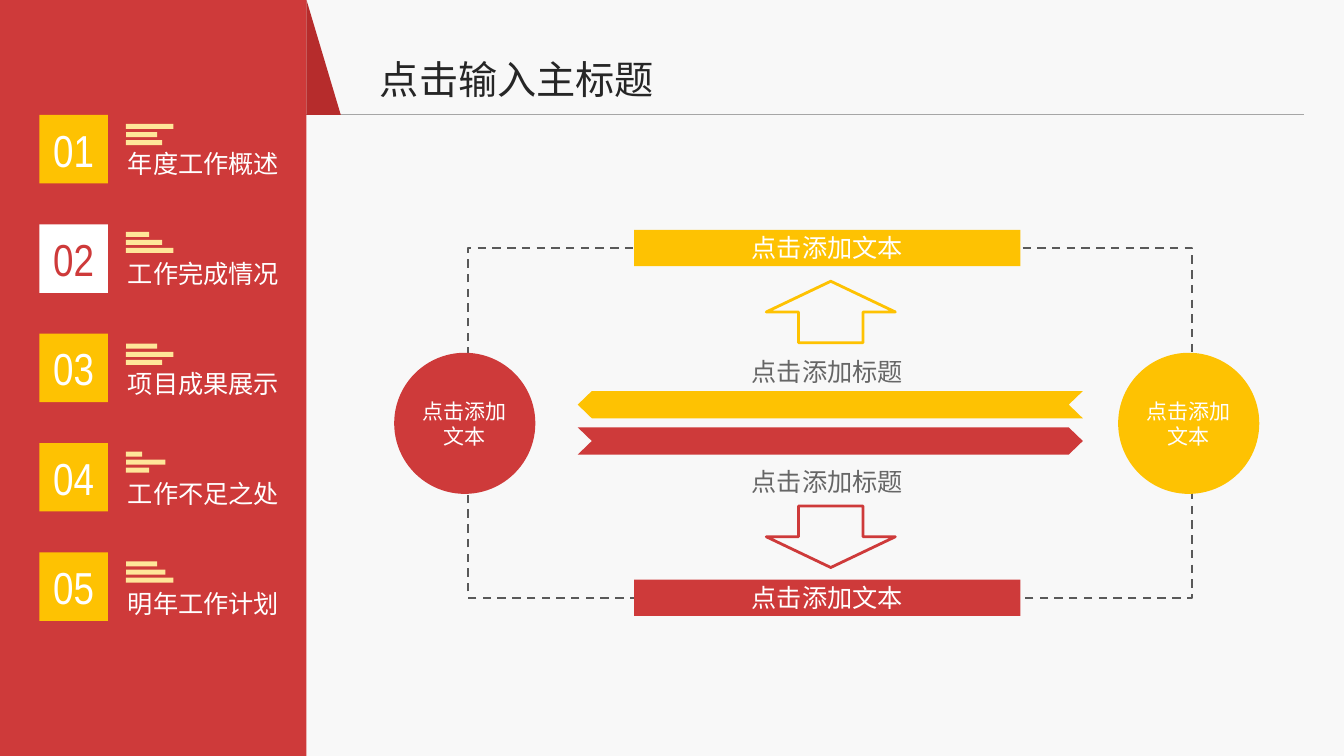
import lxml.etree
import pptx
import pptx.dml.color
import pptx.enum.dml
import pptx.enum.shapes
import pptx.enum.text
import pptx.oxml.ns
import pptx.util

Inches = pptx.util.Inches
RGBColor = pptx.dml.color.RGBColor
SHAPE = pptx.enum.shapes.MSO_SHAPE
ALIGN = pptx.enum.text.PP_ALIGN

RED = RGBColor(0xCE, 0x3A, 0x3A)
DARK_RED = RGBColor(0xB6, 0x2C, 0x2C)
YELLOW = RGBColor(0xFE, 0xC2, 0x02)
PALE_YELLOW = RGBColor(0xFF, 0xE6, 0x99)
WHITE = RGBColor(0xFF, 0xFF, 0xFF)
OFF_WHITE = RGBColor(0xF8, 0xF8, 0xF8)
RULE_GRAY = RGBColor(0xA6, 0xA6, 0xA6)
DASH_GRAY = RGBColor(0x59, 0x59, 0x59)
CAPTION_GRAY = RGBColor(0x66, 0x66, 0x66)
TITLE_GRAY = RGBColor(0x26, 0x26, 0x26)
CJK_FONT = "Noto Sans CJK SC"
NUMBER_FONT = "Arial Narrow"

presentation = pptx.Presentation()
presentation.slide_width = Inches(13.33)
presentation.slide_height = Inches(7.5)
slide = presentation.slides.add_slide(presentation.slide_layouts[6])


def add_block(kind, left, top, width, height, fill=None, line=None, line_width=2):
    """Add a preset shape that has either a fill or an outline."""
    shape = slide.shapes.add_shape(
        kind, Inches(left), Inches(top), Inches(width), Inches(height))
    shape.shadow.inherit = False
    if fill is None:
        shape.fill.background()
    else:
        shape.fill.solid()
        shape.fill.fore_color.rgb = fill
    if line is None:
        shape.line.fill.background()
    else:
        shape.line.color.rgb = line
        shape.line.width = pptx.util.Pt(line_width)
    return shape


def write(shape, text, size, color, font=CJK_FONT, align=ALIGN.CENTER,
          wrap=True, margins=(0.1, 0.05)):
    frame = shape.text_frame
    frame.word_wrap = wrap
    frame.margin_left = frame.margin_right = Inches(margins[0])
    frame.margin_top = frame.margin_bottom = Inches(margins[1])
    paragraph = frame.paragraphs[0]
    paragraph.alignment = align
    run = paragraph.add_run()
    run.text = text
    run.font.size = pptx.util.Pt(size)
    run.font.color.rgb = color
    run.font.name = font
    east_asian = lxml.etree.SubElement(
        run.font._element, pptx.oxml.ns.qn("a:ea"))
    east_asian.set("typeface", font)


# Background, sidebar and header rule
add_block(SHAPE.RECTANGLE, 1.72, 0, 11.61, 7.5, OFF_WHITE)
rule = slide.shapes.add_connector(
    pptx.enum.shapes.MSO_CONNECTOR.STRAIGHT,
    Inches(3.04), Inches(1.14), Inches(12.93), Inches(1.14))
rule.line.color.rgb = RULE_GRAY
rule.line.width = pptx.util.Pt(0.75)
lxml.etree.SubElement(rule._element.spPr, pptx.oxml.ns.qn("a:effectLst"))
add_block(SHAPE.RECTANGLE, 0, 0, 3.04, 7.5, RED)
add_block(SHAPE.RIGHT_TRIANGLE, 3.04, 0, 0.34, 1.14, DARK_RED)

# Sidebar chapters: label, top of the small bars, widths of the small bars
chapters = [
    ("年度工作概述", 1.23, (0.47, 0.31, 0.36)),
    ("工作完成情况", 2.3, (0.23, 0.36, 0.47)),
    ("项目成果展示", 3.41, (0.31, 0.47, 0.36)),
    ("工作不足之处", 4.48, (0.16, 0.39, 0.23)),
    ("明年工作计划", 5.57, (0.31, 0.39, 0.47)),
]
CURRENT_CHAPTER = 2
for index, (label, bars_top, bar_widths) in enumerate(chapters):
    number = index + 1
    current = number == CURRENT_CHAPTER
    badge = add_block(SHAPE.RECTANGLE, 0.39, 1.14 + index * 1.085, 0.68, 0.68,
                      WHITE if current else YELLOW)
    write(badge, f"{number:02d}", 32, RED if current else WHITE, NUMBER_FONT)
    for row, bar_width in enumerate(bar_widths):
        add_block(SHAPE.RECTANGLE, 1.25, bars_top + row * 0.08, bar_width, 0.05,
                  PALE_YELLOW)
    label_box = slide.shapes.add_textbox(
        Inches(1.17), Inches(1.42 + index * 1.0925), Inches(1.72), Inches(0.4))
    write(label_box, label, 18, WHITE, align=ALIGN.LEFT, wrap=False)

# Title
title = slide.shapes.add_textbox(
    Inches(3.67), Inches(0.5), Inches(2.95), Inches(0.57))
write(title, "点击输入主标题", 28, TITLE_GRAY, align=ALIGN.LEFT, wrap=False)

# Dashed loop with a circle on each side
loop = add_block(SHAPE.RECTANGLE, 4.64, 2.46, 7.18, 3.47,
                 line=DASH_GRAY, line_width=1.5)
loop.line.dash_style = pptx.enum.dml.MSO_LINE.DASH
for left, color in ((3.91, RED), (11.09, YELLOW)):
    circle = add_block(SHAPE.OVAL, left, 3.5, 1.4, 1.4, color)
    write(circle, "点击添加文本", 15, WHITE, margins=(0.07, 0.04))

# Upper and lower halves: banner, outlined arrow, caption
halves = [
    (YELLOW, 2.28, SHAPE.UP_ARROW, 2.79, 3.49),
    (RED, 5.75, SHAPE.DOWN_ARROW, 5.02, 4.59),
]
for color, banner_top, arrow, arrow_top, caption_top in halves:
    banner = add_block(SHAPE.RECTANGLE, 6.29, banner_top, 3.83, 0.36, color)
    write(banner, "点击添加文本", 18, WHITE, margins=(0.08, 0.04))
    add_block(arrow, 7.6, arrow_top, 1.28, 0.61, line=color)
    caption = slide.shapes.add_textbox(
        Inches(7.3), Inches(caption_top), Inches(1.81), Inches(0.38))
    write(caption, "点击添加标题", 18, CAPTION_GRAY, margins=(0.08, 0.04))

# Notched ribbons, each given by its tail, its tip and its top
NOTCH = 0.14
RIBBON_HEIGHT = 0.27
for color, tail, tip, top in ((RED, 5.73, 10.74, 4.24), (YELLOW, 10.74, 5.73, 3.88)):
    notch = NOTCH if tip > tail else -NOTCH
    middle, bottom = top + RIBBON_HEIGHT / 2, top + RIBBON_HEIGHT
    points = [(tip - notch, top), (tip, middle), (tip - notch, bottom),
              (tail, bottom), (tail + notch, middle)]
    builder = slide.shapes.build_freeform(Inches(tail), Inches(top))
    builder.add_line_segments([(Inches(x), Inches(y)) for x, y in points])
    ribbon = builder.convert_to_shape()
    ribbon.shadow.inherit = False
    ribbon.fill.solid()
    ribbon.fill.fore_color.rgb = color
    ribbon.line.fill.background()

presentation.save("out.pptx")
